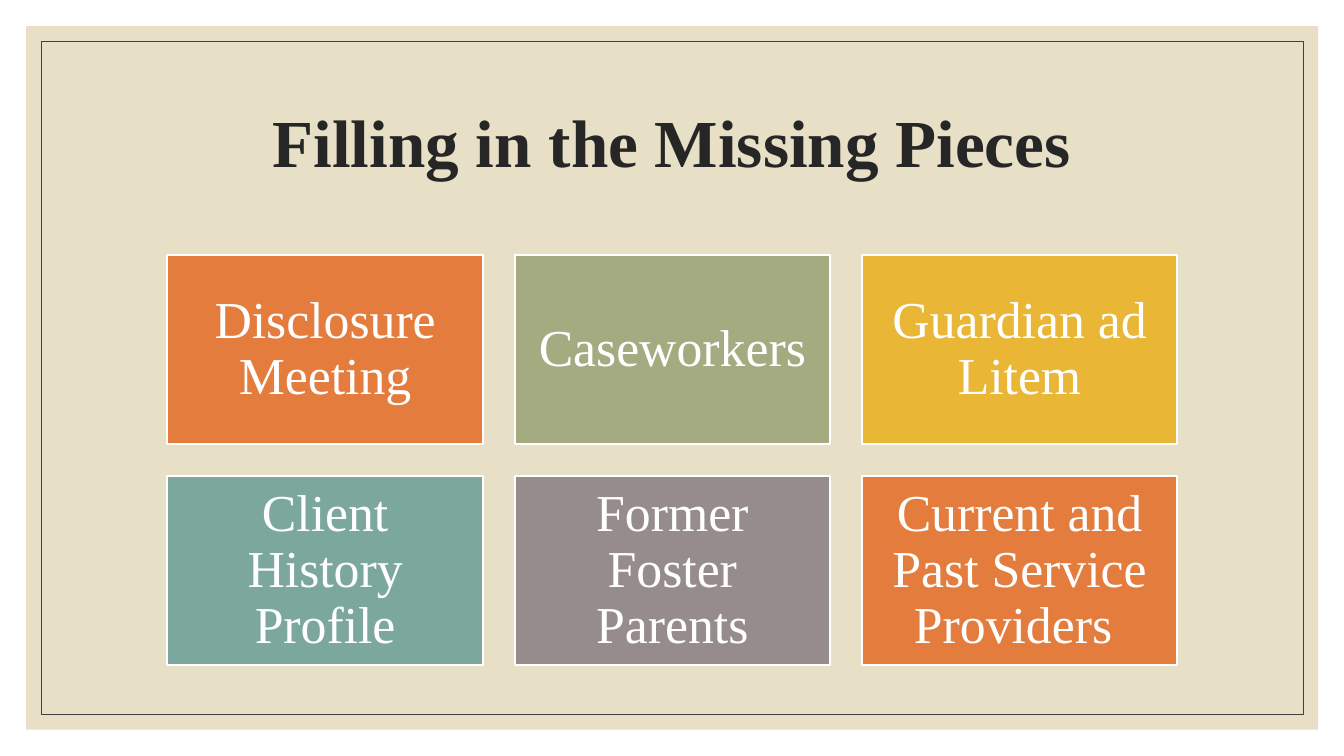
from pptx import Presentation
from pptx.dml.color import RGBColor
from pptx.enum import shapes, text
from pptx.util import Cm, Pt

FONT = "Times New Roman"
WHITE = RGBColor(0xFF, 0xFF, 0xFF)
INK = RGBColor(0x26, 0x26, 0x26)
FRAME_GREY = RGBColor(0x40, 0x40, 0x40)
SAND = RGBColor(0xE7, 0xE0, 0xC7)
ORANGE = RGBColor(0xE3, 0x7C, 0x3D)
SAGE = RGBColor(0xA5, 0xAB, 0x81)
GOLD = RGBColor(0xE9, 0xB6, 0x35)
TEAL = RGBColor(0x7B, 0xA7, 0x9D)
MAUVE = RGBColor(0x96, 0x8C, 0x8C)

SOURCES = [
    ("Disclosure Meeting", ORANGE),
    ("Caseworkers", SAGE),
    ("Guardian ad Litem", GOLD),
    ("Client History Profile", TEAL),
    ("Former Foster Parents", MAUVE),
    ("Current and Past Service Providers ", ORANGE),
]


def write(shape, wording, size, color, bold=False, inset=None):
    """Fill the shape with one centred paragraph; inset applies to all sides."""
    frame = shape.text_frame
    frame.word_wrap = True
    frame.auto_size = text.MSO_AUTO_SIZE.NONE
    frame.vertical_anchor = text.MSO_ANCHOR.MIDDLE
    if inset is not None:
        frame.margin_left = frame.margin_right = inset
        frame.margin_top = frame.margin_bottom = inset
    paragraph = frame.paragraphs[0]
    paragraph.alignment = text.PP_ALIGN.CENTER
    paragraph.line_spacing = 0.9
    run = paragraph.add_run()
    run.text = wording
    run.font.name = FONT
    run.font.size = Pt(size)
    run.font.bold = bold
    run.font.color.rgb = color


def add_box(slide, left, top, width, height, fill=None, line=None, weight=1):
    box = slide.shapes.add_shape(
        shapes.MSO_SHAPE.RECTANGLE, left, top, width, height)
    box.shadow.inherit = False
    if fill is None:
        box.fill.background()
    else:
        box.fill.solid()
        box.fill.fore_color.rgb = fill
    if line is None:
        box.line.fill.background()
    else:
        box.line.color.rgb = line
        box.line.width = Pt(weight)
    return box


def add_backdrop(slide, left, top, width, height):
    margin = Cm(0.38)
    add_box(slide, left, top, width, height, fill=SAND)
    add_box(slide, left + margin, top + margin, width - 2 * margin,
            height - 2 * margin, line=FRAME_GREY, weight=0.5)


def place_title(slide, left, top, width, height):
    """Set the title and bring it in front of the backdrop."""
    title = slide.shapes.title
    title.left, title.top, title.width, title.height = left, top, width, height
    write(title, "Filling in the Missing Pieces", 48, INK, bold=True)
    title.element.getparent().append(title.element)


def add_source_grid(slide, left, top, width, height, columns=3, gap=Cm(0.8)):
    rows = -(-len(SOURCES) // columns)
    tile_width = (width - (columns - 1) * gap) // columns
    tile_height = (height - (rows - 1) * gap) // rows
    for index, (source, color) in enumerate(SOURCES):
        row, column = divmod(index, columns)
        tile = add_box(slide, left + column * (tile_width + gap),
                       top + row * (tile_height + gap),
                       tile_width, tile_height,
                       fill=color, line=WHITE, weight=1.5)
        write(tile, source, 37, WHITE, inset=Cm(0.38))


def main():
    deck = Presentation()
    deck.slide_width, deck.slide_height = Cm(33.87), Cm(19.05)
    slide = deck.slides.add_slide(deck.slide_layouts[5])
    add_backdrop(slide, Cm(0.66), Cm(0.66), Cm(32.56), Cm(17.73))
    place_title(slide, Cm(2.97), Cm(1.78), Cm(27.94), Cm(3.81))
    add_source_grid(slide, Cm(4.22), Cm(6.43), Cm(25.45), Cm(10.34))
    deck.save("out.pptx")


if __name__ == "__main__":
    main()
